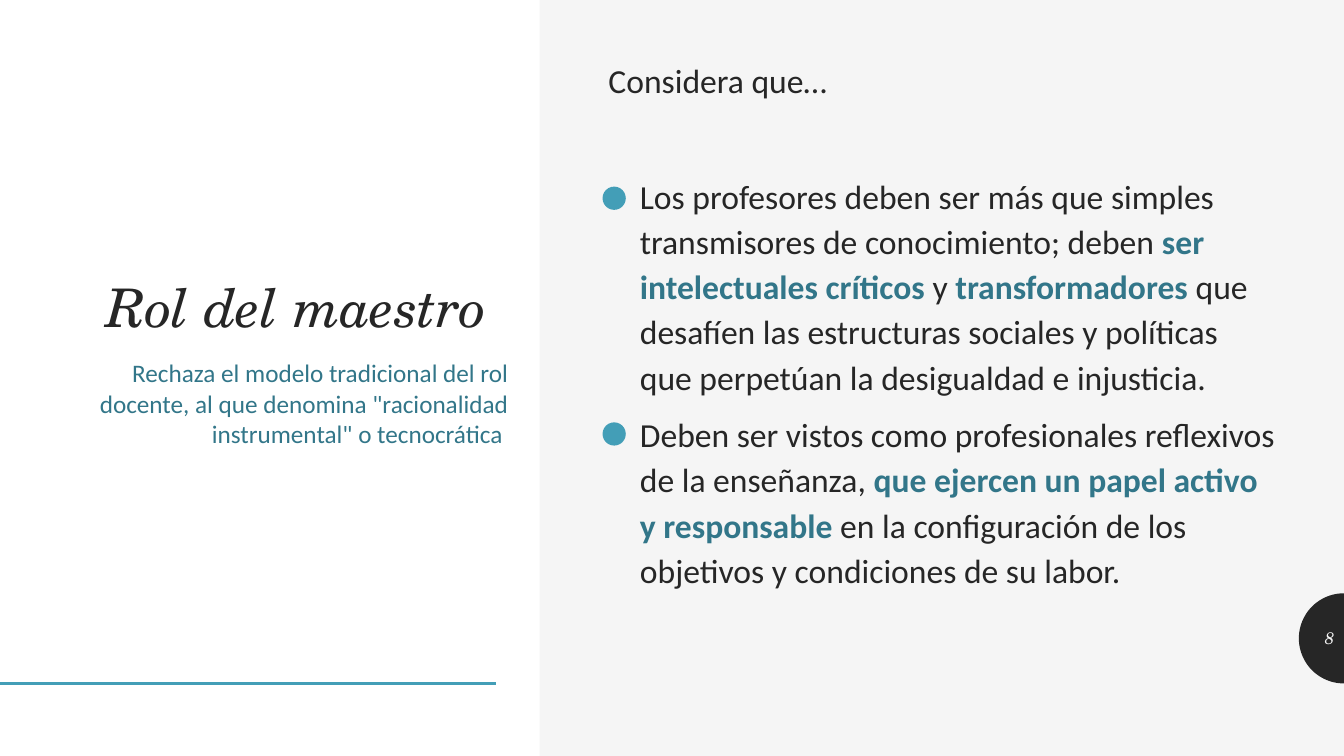
import math

import pptx
import pptx.dml.color
import pptx.enum.shapes
import pptx.enum.text
import pptx.oxml
import pptx.oxml.ns
import pptx.util

Pt = pptx.util.Pt
ALIGN = pptx.enum.text.PP_ALIGN
ANCHOR = pptx.enum.text.MSO_ANCHOR
SHAPE = pptx.enum.shapes.MSO_SHAPE

COLORS = {
    "background": "F5F5F5",
    "panel": "FFFFFF",
    "ink": "262626",
    "accent": "439EB7",
    "emphasis": "327689",
}
BODY_FONT = "Calibri"
TITLE_FONT = "TeX Gyre Schola"
WIDTH, HEIGHT = 960, 540


def color(name):
    return pptx.dml.color.RGBColor.from_string(COLORS[name])


def add_run(paragraph, text, size=24, font=BODY_FONT, fill="ink", bold=False, italic=False):
    run = paragraph.add_run()
    run.text = text
    run.font.size = Pt(size)
    run.font.name = font
    run.font.bold = bold
    run.font.italic = italic
    run.font.color.rgb = color(fill)


def add_bullet(paragraph, indent):
    properties = paragraph._p.get_or_add_pPr()
    properties.set("marL", str(Pt(indent)))
    properties.set("indent", str(-Pt(indent)))
    namespace = pptx.oxml.ns.nsdecls("a")
    for xml in (
        f'<a:buClr {namespace}><a:srgbClr val="{COLORS["accent"]}"/></a:buClr>',
        f'<a:buFont {namespace} typeface="Arial"/>',
        f'<a:buChar {namespace} char="•"/>',
    ):
        properties.append(pptx.oxml.parse_xml(xml))


class SlideBuilder:
    def __init__(self, slide):
        self.slide = slide
        slide.background.fill.solid()
        slide.background.fill.fore_color.rgb = color("background")

    def paint(self, shape, fill):
        shape.shadow.inherit = False
        shape.fill.solid()
        shape.fill.fore_color.rgb = color(fill)
        shape.line.fill.background()

    def shape(self, kind, left, top, width, height, fill):
        shape = self.slide.shapes.add_shape(kind, Pt(left), Pt(top), Pt(width), Pt(height))
        self.paint(shape, fill)

    def half_disc(self, center_x, center_y, radius, fill, steps=48):
        angles = [math.pi * (0.5 + step / steps) for step in range(steps + 1)]
        points = [
            (Pt(center_x + radius * math.cos(angle)), Pt(center_y + radius * math.sin(angle)))
            for angle in angles
        ]
        builder = self.slide.shapes.build_freeform(*points[0], scale=1.0)
        builder.add_line_segments(points[1:], close=True)
        self.paint(builder.convert_to_shape(), fill)

    def line(self, x1, y1, x2, y2, fill, weight):
        connector = self.slide.shapes.add_connector(
            pptx.enum.shapes.MSO_CONNECTOR.STRAIGHT, Pt(x1), Pt(y1), Pt(x2), Pt(y2))
        connector.line.color.rgb = color(fill)
        connector.line.width = Pt(weight)
        effects = f'<a:effectLst {pptx.oxml.ns.nsdecls("a")}/>'
        connector._element.spPr.append(pptx.oxml.parse_xml(effects))

    def text_frame(self, left, top, width, height, anchor=ANCHOR.TOP):
        box = self.slide.shapes.add_textbox(Pt(left), Pt(top), Pt(width), Pt(height))
        box.text_frame.word_wrap = True
        box.text_frame.vertical_anchor = anchor
        return box.text_frame

    def label(self, text, left, top, width, height, anchor=ANCHOR.TOP, spacing=1.0, **style):
        paragraph = self.text_frame(left, top, width, height, anchor).paragraphs[0]
        paragraph.alignment = ALIGN.RIGHT
        paragraph.line_spacing = spacing
        add_run(paragraph, text, **style)

    def body(self, heading, items, left, top, width, height):
        frame = self.text_frame(left, top, width, height)
        add_run(frame.paragraphs[0], heading)
        for item in items:
            paragraph = frame.add_paragraph()
            add_bullet(paragraph, 22.5)
            for text, strong in item:
                add_run(paragraph, text, fill="emphasis" if strong else "ink", bold=strong)
        for paragraph in frame.paragraphs:
            paragraph.line_spacing = 1.12
            paragraph.space_before = Pt(9)
        # Wide gap between the heading and the list
        frame.paragraphs[1].space_before = Pt(50.5)


def main():
    presentation = pptx.Presentation()
    presentation.slide_width = Pt(WIDTH)
    presentation.slide_height = Pt(HEIGHT)
    builder = SlideBuilder(presentation.slides.add_slide(presentation.slide_layouts[6]))

    # Page number tab, white panel and rule
    builder.half_disc(WIDTH, 456, 32.2, "ink")
    builder.shape(SHAPE.RECTANGLE, 0, 0, 385.5, HEIGHT, "panel")
    builder.line(0, 488, 354.3, 488, "accent", 2)

    # Title
    builder.label("Rol del maestro", 28.8, 155.5, 325.5, 90, anchor=ANCHOR.BOTTOM,
                  spacing=0.9, size=38, font=TITLE_FONT, italic=True)

    # Body list
    items = [
        [
            ("Los profesores deben ser más que simples transmisores de conocimiento; deben ", False),
            ("ser intelectuales críticos ", True),
            ("y ", False),
            ("transformadores", True),
            (" que desafíen las estructuras sociales y políticas que perpetúan"
             " la desigualdad e injusticia.", False),
        ],
        [
            ("Deben ser vistos como profesionales reflexivos de la enseñanza, ", False),
            ("que ejercen un papel activo y responsable ", True),
            ("en la configuración de los objetivos y condiciones de su labor.", False),
        ],
    ]
    builder.body("Considera que…", items, 427.5, 36, 492, 435)

    # Round markers over the list bullets
    for top in (133.3, 301.7):
        builder.shape(SHAPE.OVAL, 430.4, top, 16.6, 16.6, "accent")

    # Page number and subtitle
    builder.label("8", 928, 441.5, 32, 28.8, anchor=ANCHOR.MIDDLE,
                  size=12, font=TITLE_FONT, fill="background", italic=True)
    builder.label('Rechaza el modelo tradicional del rol docente, al que denomina'
                  ' "racionalidad instrumental" o tecnocrática ',
                  59.8, 252, 310.3, 72.7, size=18, fill="emphasis")

    presentation.save("out.pptx")


if __name__ == "__main__":
    main()
